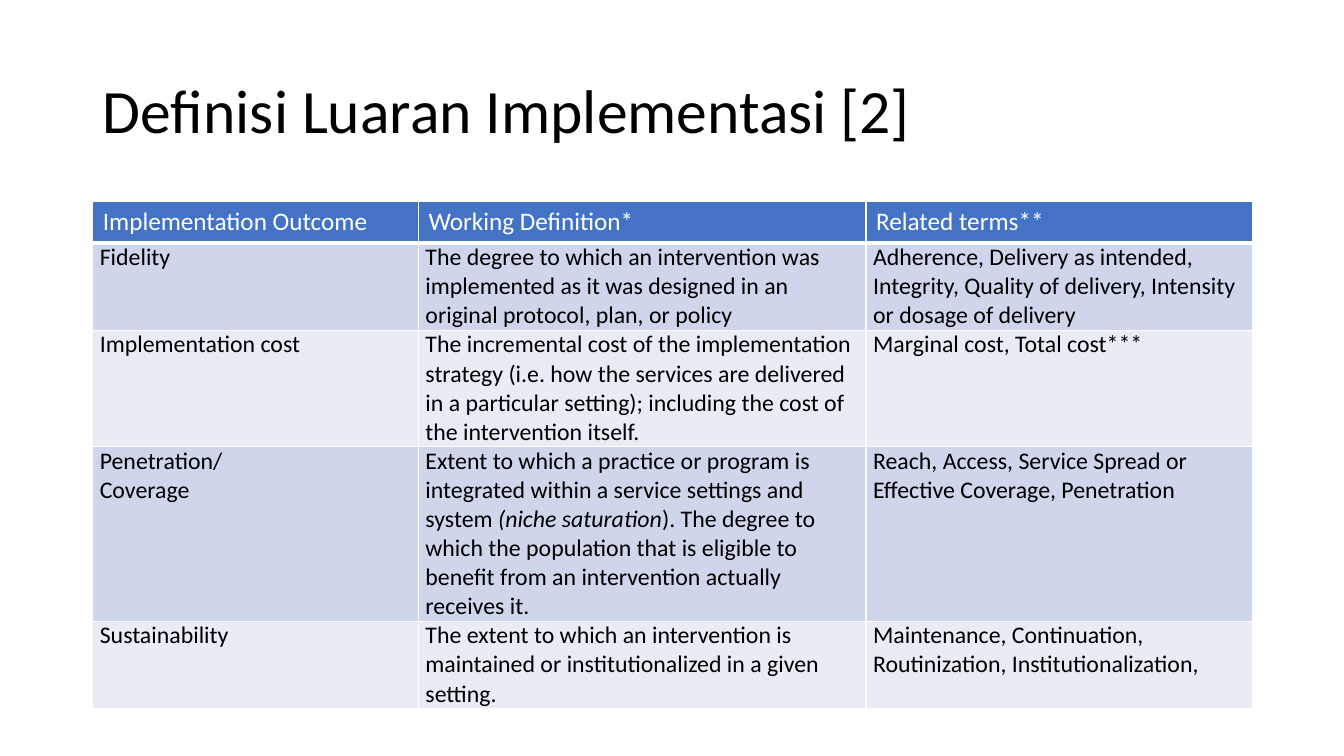
from lxml import etree
from pptx import Presentation
from pptx.dml.color import RGBColor
from pptx.enum.text import MSO_ANCHOR, PP_ALIGN
from pptx.oxml.ns import qn
from pptx.util import Inches, Pt

COLORS = {"header": "4472C4", "odd": "CFD5EA", "even": "E9EBF5",
          "white": "FFFFFF", "black": "000000"}
FONT = "Calibri"
COL_WIDTHS = [3.23, 4.44, 3.83]
ROW_HEIGHT = 0.41
HEADER = ["Implementation Outcome", "Working Definition*", "Related terms**"]
OUTCOMES = [
    ["Fidelity",
     "The degree to which an intervention was implemented as it was designed "
     "in an original protocol, plan, or policy",
     "Adherence, Delivery as intended, Integrity, Quality of delivery, "
     "Intensity or dosage of delivery"],
    ["Implementation cost",
     "The incremental cost of the implementation strategy (i.e. how the "
     "services are delivered in a particular setting); including the cost of "
     "the intervention itself.",
     "Marginal cost, Total cost***"],
    ["Penetration/\nCoverage",
     "Extent to which a practice or program is integrated within a service "
     "settings and system |(niche saturation|). The degree to which the "
     "population that is eligible to benefit from an intervention actually "
     "receives it.",
     "Reach, Access, Service Spread or Effective Coverage, Penetration"],
    ["Sustainability",
     "The extent to which an intervention is maintained or institutionalized "
     "in a given setting.",
     "Maintenance, Continuation, Routinization, Institutionalization,"],
]


def write(tf, text, size=17, color="black", spacing=None):
    """Fill a text frame; newlines split paragraphs, bars enclose italics."""
    for i, line in enumerate(text.split("\n")):
        p = tf.add_paragraph() if i else tf.paragraphs[0]
        p.alignment = PP_ALIGN.LEFT
        if spacing:
            p.line_spacing = spacing
        for j, part in enumerate(line.split("|")):
            r = p.add_run()
            r.text = part
            r.font.name = FONT
            r.font.size = Pt(size)
            r.font.bold = False
            r.font.italic = j % 2 == 1
            r.font.color.rgb = RGBColor.from_string(COLORS[color])


def set_borders(cell, bottom):
    """Draw white cell borders, with the bottom one as wide as given."""
    tcPr = cell._tc.get_or_add_tcPr()
    for side, width in (("L", 1), ("R", 1), ("T", 1), ("B", bottom)):
        ln = etree.SubElement(tcPr, qn(f"a:ln{side}"), w=str(Pt(width)))
        fill = etree.SubElement(ln, qn("a:solidFill"))
        etree.SubElement(fill, qn("a:srgbClr"), val=COLORS["white"])


def add_title(s, text, left, top, width, height):
    """Place and format the slide title."""
    sp = s.shapes.title
    sp.left, sp.top = Inches(left), Inches(top)
    sp.width, sp.height = Inches(width), Inches(height)
    sp.text_frame.vertical_anchor = MSO_ANCHOR.MIDDLE
    write(sp.text_frame, text, size=44, spacing=0.9)


def add_outcome_table(s, left, top, width, height):
    """Add the table of implementation outcomes."""
    rows = [HEADER] + OUTCOMES
    table = s.shapes.add_table(len(rows), len(HEADER), Inches(left), Inches(top),
                               Inches(width), Inches(height)).table
    for column, share in zip(table.columns, COL_WIDTHS):
        column.width = Inches(width * share / sum(COL_WIDTHS))
    for i, texts in enumerate(rows):
        table.rows[i].height = Inches(ROW_HEIGHT)
        is_header = i == 0
        fill = "header" if is_header else "odd" if i % 2 else "even"
        for j, text in enumerate(texts):
            cell = table.cell(i, j)
            set_borders(cell, bottom=3 if is_header else 1)
            cell.fill.solid()
            cell.fill.fore_color.rgb = RGBColor.from_string(COLORS[fill])
            if is_header:
                write(cell.text_frame, text, size=18, color="white")
            else:
                cell.margin_left = cell.margin_right = Inches(0.07)
                cell.margin_top = cell.margin_bottom = 0
                write(cell.text_frame, text)


def main():
    """Build the slide and save it."""
    prs = Presentation()
    prs.slide_width, prs.slide_height = Inches(13.33), Inches(7.5)
    s = prs.slides.add_slide(prs.slide_layouts[5])
    add_title(s, "Definisi Luaran Implementasi [2]", 0.92, 0.4, 11.5, 1.45)
    add_outcome_table(s, 0.92, 2, 11.5, 4.94)
    prs.save("out.pptx")


if __name__ == "__main__":
    main()
